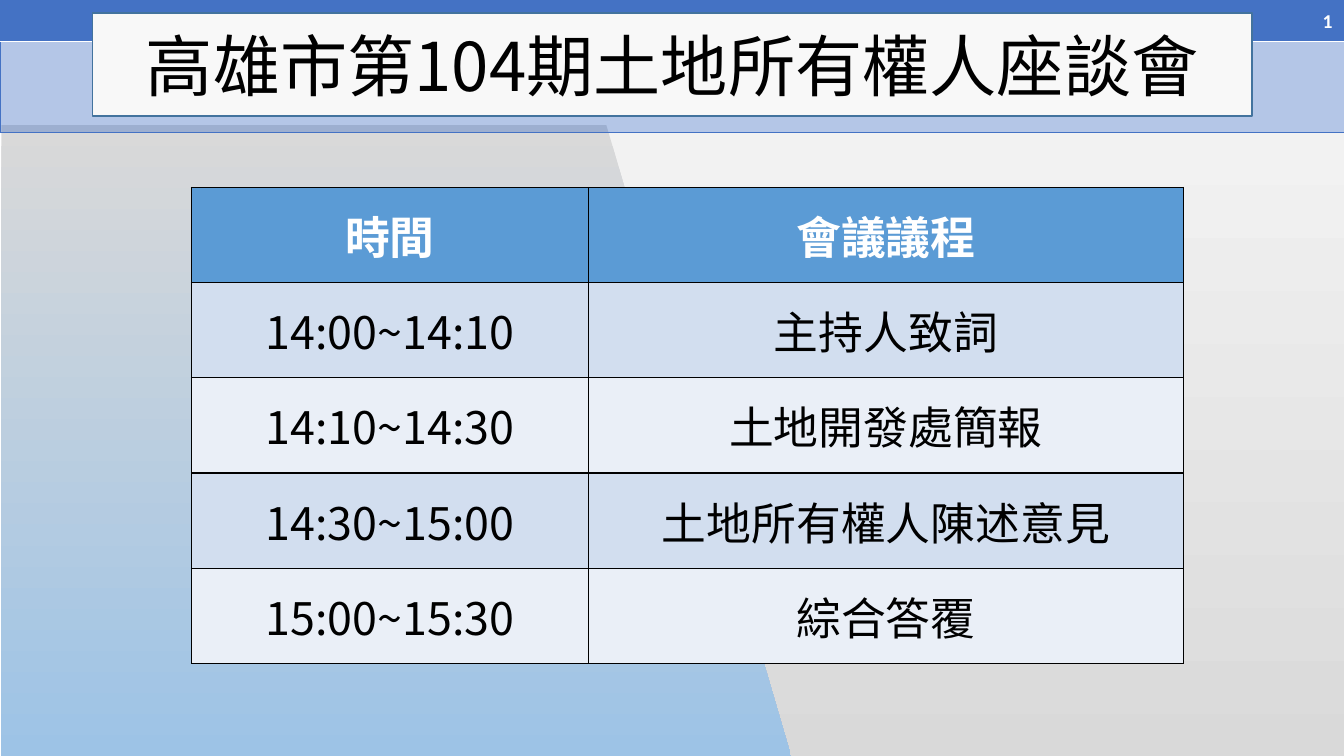
import pptx
import pptx.util
import pptx.dml.color
import pptx.enum.shapes
import pptx.enum.text
import pptx.oxml.ns
from lxml import etree

Pt = pptx.util.Pt
RGBColor = pptx.dml.color.RGBColor
ALIGN = pptx.enum.text.PP_ALIGN
qn = pptx.oxml.ns.qn

BLACK = RGBColor(0x00, 0x00, 0x00)
WHITE = RGBColor(0xFF, 0xFF, 0xFF)
BLUE = RGBColor(0x44, 0x72, 0xC4)
HEADER_BLUE = RGBColor(0x5B, 0x9B, 0xD5)
BAND_COLORS = [RGBColor(0xEA, 0xEF, 0xF7), RGBColor(0xD2, 0xDE, 0xEF)]
GRAY = RGBColor(0xD9, 0xD9, 0xD9)
LIGHT_GRAY = RGBColor(0xF2, 0xF2, 0xF2)
SKY = RGBColor(0x9D, 0xC3, 0xE6)
TITLE_FILL = RGBColor(0xF8, 0xF8, 0xF8)
TITLE_LINE = RGBColor(0x43, 0x73, 0x9E)
CJK_FONT = "Noto Sans CJK SC"


def write_text(text_frame, text, size, color=BLACK, bold=False, font=CJK_FONT, align=ALIGN.CENTER):
    paragraph = text_frame.paragraphs[0]
    paragraph.alignment = align
    paragraph.line_spacing = 1.0
    run = paragraph.add_run()
    run.text = text
    run.font.size = Pt(size)
    run.font.bold = bold
    run.font.name = font
    run.font.color.rgb = color
    etree.SubElement(run.font._element, qn("a:ea"), typeface=font)
    return run


def set_borders(cell, **borders):
    properties = cell._tc.get_or_add_tcPr()
    for index, side in enumerate(("left", "right", "top", "bottom")):
        color, width = borders.get(side, borders["default"])
        line = etree.Element(qn("a:ln" + side[0].upper()), w=str(Pt(width)))
        fill = etree.SubElement(line, qn("a:solidFill"))
        etree.SubElement(fill, qn("a:srgbClr"), val=str(color))
        properties.insert(index, line)


presentation = pptx.Presentation()
presentation.slide_width = Pt(960)
presentation.slide_height = Pt(540)
slide = presentation.slides.add_slide(presentation.slide_layouts[5])
shapes = slide.shapes

# Background: gray panel and slanted blue panel
gray_panel = shapes.add_shape(pptx.enum.shapes.MSO_SHAPE.RECTANGLE, Pt(366.5), Pt(94.3), Pt(601), Pt(453.6))
gray_panel.rotation = 180
builder = shapes.build_freeform(0.7, 88.6, scale=Pt(1))
builder.add_line_segments([(432.7, 88.6), (565.2, 540), (0.7, 540)], close=True)
blue_panel = builder.convert_to_shape()
for panel, end_color in ((gray_panel, LIGHT_GRAY), (blue_panel, SKY)):
    panel.shadow.inherit = False
    panel.line.fill.background()
    panel.fill.gradient()
    panel.fill.gradient_angle = 270
    for stop, color, position in zip(panel.fill.gradient_stops, (GRAY, end_color), (0, 1)):
        stop.color.rgb = color
        stop.position = position

# Header band
band = shapes.add_table(2, 1, 0, 0, Pt(960), Pt(94.3)).table
for row, height in zip(band.rows, (29.5, 64.8)):
    row.height = Pt(height)
    cell = row.cells[0]
    cell.fill.solid()
    cell.fill.fore_color.rgb = BLUE
white_edge = (WHITE, 1)
set_borders(band.cell(0, 0), default=(BLUE, 0.5), bottom=white_edge)
set_borders(band.cell(1, 0), default=(BLUE, 0.5), top=white_edge)
band_color = band.cell(1, 0)._tc.tcPr.find(qn("a:solidFill"))[0]
etree.SubElement(band_color, qn("a:alpha"), val="40000")

# Slide number
number_box = shapes.add_textbox(Pt(919.4), Pt(0.7), Pt(39.6), Pt(28.8))
number_box.text_frame.word_wrap = True
number_box.text_frame.vertical_anchor = pptx.enum.text.MSO_ANCHOR.MIDDLE
number_run = write_text(number_box.text_frame, "1", 14, WHITE, True, "Calibri", ALIGN.RIGHT)
number_field = number_run._r
number_field.tag = qn("a:fld")
number_field.set("id", "{B6F15528-21DE-4FAA-801E-634DDDAF4B2B}")
number_field.set("type", "slidenum")

# Agenda table
agenda_rows = [
    ("時間", "會議議程"),
    ("14:00~14:10", "主持人致詞"),
    ("14:10~14:30", "土地開發處簡報"),
    ("14:30~15:00", "土地所有權人陳述意見"),
    ("15:00~15:30", "綜合答覆"),
]
agenda = shapes.add_table(len(agenda_rows), 2, Pt(136.8), Pt(133.9), Pt(708.8), Pt(340)).table
for column, width in zip(agenda.columns, (283.5, 425.3)):
    column.width = Pt(width)
for row_index, texts in enumerate(agenda_rows):
    is_header = row_index == 0
    for column_index, text in enumerate(texts):
        cell = agenda.cell(row_index, column_index)
        cell.vertical_anchor = pptx.enum.text.MSO_ANCHOR.MIDDLE
        cell.fill.solid()
        cell.fill.fore_color.rgb = HEADER_BLUE if is_header else BAND_COLORS[row_index % 2]
        set_borders(cell, default=(BLACK, 1))
        write_text(cell.text_frame, text, 32, WHITE if is_header else BLACK, is_header)

# Title on a rounded plate, in front of the header band
title = shapes.title
title.left, title.top, title.width, title.height = Pt(66.2), Pt(9.4), Pt(828), Pt(73.4)
etree.SubElement(title._element.spPr, qn("a:prstGeom"), prst="roundRect")
title.fill.solid()
title.fill.fore_color.rgb = TITLE_FILL
title.line.color.rgb = TITLE_LINE
title.line.width = Pt(1)
title.text_frame.auto_size = pptx.enum.text.MSO_AUTO_SIZE.NONE
title.text_frame.vertical_anchor = pptx.enum.text.MSO_ANCHOR.MIDDLE
write_text(title.text_frame, "高雄市第104期土地所有權人座談會", 48)
shapes._spTree.append(title._element)

presentation.save("out.pptx")
